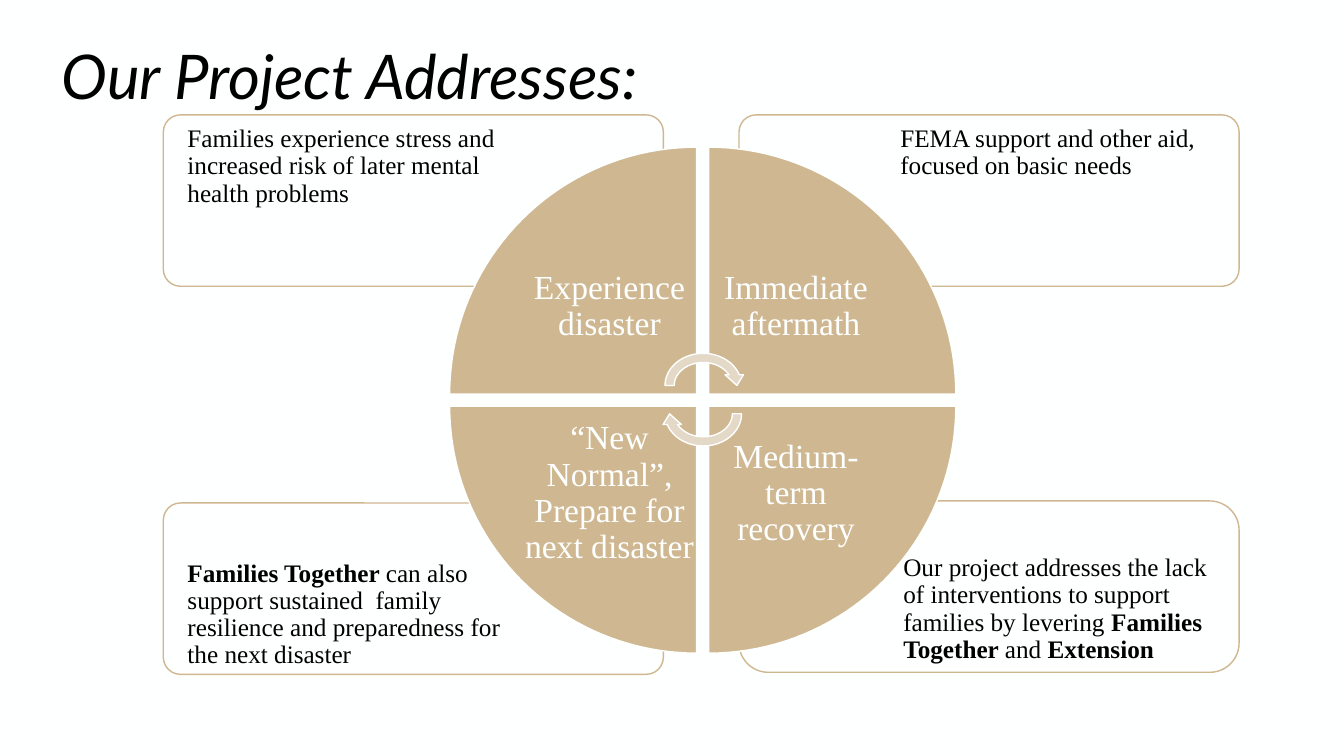
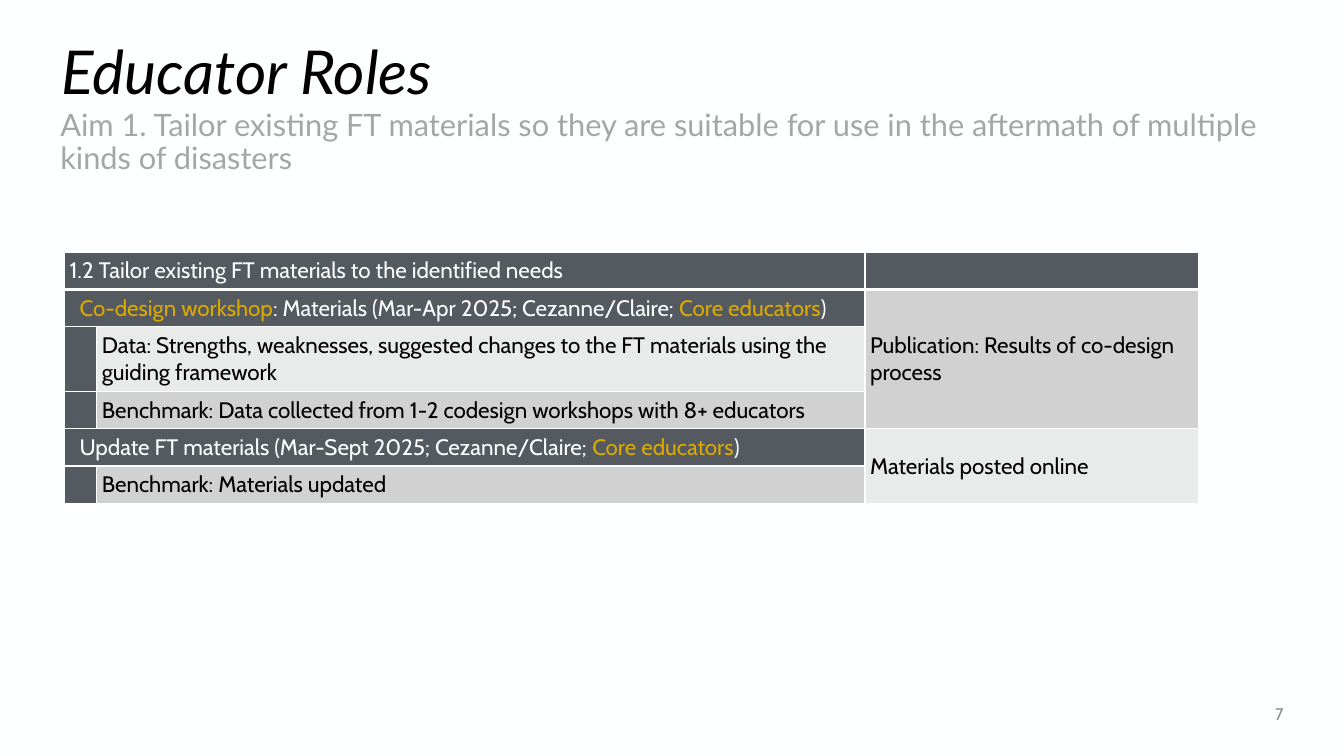
from math import cos, pi, sin

from lxml.etree import SubElement
from pptx import Presentation
from pptx.dml.color import RGBColor
from pptx.enum.shapes import MSO_SHAPE
from pptx.enum.text import MSO_ANCHOR, MSO_AUTO_SIZE, PP_ALIGN
from pptx.oxml.ns import qn
from pptx.util import Inches, Pt

PAPER = RGBColor(0xFE, 0xFF, 0xFF)
INK = RGBColor(0, 0, 0)
TAN = RGBColor(0xCF, 0xB8, 0x91)
PALE_TAN = RGBColor(0xE4, 0xD8, 0xC7)
SLATE = RGBColor(0x55, 0x59, 0x60)
GOLD = RGBColor(0xDA, 0xAA, 0x00)
MID_GRAY = RGBColor(0xD1, 0xD1, 0xD2)
LIGHT_GRAY = RGBColor(0xE9, 0xEA, 0xEA)
SUBTITLE_GRAY = RGBColor(0xA6, 0xA6, 0xA6)
NUMBER_GRAY = RGBColor(0x8C, 0x8C, 0x8C)
SERIF, SANS, TABLE_FONT = "Times New Roman", "Lato", "Cabin"
BOLD = {"bold": True}
GOLDEN = {"color": GOLD}

CENTER_X, CENTER_Y, HALF_GAP, RADIUS = 6.97, 3.97, 0.06, 2.45
PANEL_WIDTH, PANEL_HEIGHT = 4.96, 1.7
TOP, MIDDLE = MSO_ANCHOR.TOP, MSO_ANCHOR.MIDDLE

PANELS = [
    (1.62, 1.14, 0.17, (0.24, 0.11, 1.6, 0.57), TOP,
     ["Families experience stress and increased risk of later mental health problems"]),
    (7.33, 1.14, 0.17, (1.6, 0.11, 0.11, 0.57), TOP,
     ["FEMA support and other aid, focused on basic needs"]),
    (1.62, 4.99, 0.17, (0.24, 0.57, 1.6, 0.11), TOP,
     [("Families Together ", BOLD),
      "can also support sustained  family resilience and preparedness for the next disaster"]),
    (7.33, 4.97, 0.29, (1.63, 0.59, 0.14, 0.14), MIDDLE,
     ["Our project addresses the lack of interventions to support families by levering ",
      ("Families Together ", BOLD), "and", (" Extension", BOLD)]),
]
QUADRANTS = [
    (-1, -1, "Experience disaster"),
    (1, -1, "Immediate aftermath"),
    (1, 1, "Medium-term recovery"),
    (-1, 1, "“New Normal”, Prepare for next disaster"),
]
ARROWS = [(3.46, 0), (3.74, 180)]

COLUMNS = [0.32, 7.62, 3.31]
ROWS = [0.37, 0.37, 0.64, 0.37, 0.37, 0.37]
MERGES = [(0, 0, 0, 1), (1, 0, 1, 1), (4, 0, 4, 1), (1, 2, 3, 2), (4, 2, 5, 2)]
FILLS = [
    (SLATE, SLATE, SLATE),
    (SLATE, SLATE, MID_GRAY),
    (SLATE, LIGHT_GRAY, MID_GRAY),
    (SLATE, MID_GRAY, MID_GRAY),
    (SLATE, SLATE, LIGHT_GRAY),
    (SLATE, MID_GRAY, LIGHT_GRAY),
]
CELL_TEXT = {
    (0, 0): ["1.2 Tailor existing FT materials to the identified needs"],
    (1, 0): [("Co-design workshop", GOLDEN), ": Materials (Mar-Apr 2025; Cezanne/Claire; ",
             ("Core educators", GOLDEN), ")"],
    (1, 2): ["Publication: Results of co-design process"],
    (2, 1): ["Data: Strengths, weaknesses, suggested changes to the FT materials "
             "using the guiding framework"],
    (3, 1): ["Benchmark: Data collected from 1-2 codesign workshops with 8+ educators"],
    (4, 0): ["Update FT materials (Mar-Sept 2025; Cezanne/Claire; ",
             ("Core educators", GOLDEN), ")"],
    (4, 2): ["Materials posted online"],
    (5, 1): ["Benchmark: Materials updated"],
}
INDENTED_ROWS = (1, 4)


def write(frame, parts, font=SERIF, size=18, color=INK, bold=False, italic=False,
          align=PP_ALIGN.LEFT, anchor=TOP, spacing=None, insets=None):
    frame.word_wrap = True
    frame.auto_size = MSO_AUTO_SIZE.NONE
    frame.vertical_anchor = anchor
    if insets:
        (frame.margin_left, frame.margin_top,
         frame.margin_right, frame.margin_bottom) = map(Inches, insets)
    write_paragraph(frame.paragraphs[0], parts, font, size, color, bold, italic, align, spacing)


def write_paragraph(para, parts, font, size, color, bold=False, italic=False,
                    align=PP_ALIGN.LEFT, spacing=None):
    para.alignment = align
    para.line_spacing = spacing
    for part in parts:
        text, changes = (part, {}) if isinstance(part, str) else part
        span = para.add_run()
        span.text = text
        span.font.name = font
        span.font.size = Pt(size)
        span.font.bold = changes.get("bold", bold)
        span.font.italic = italic
        span.font.color.rgb = changes.get("color", color)


def paint(shape, fill, line):
    shape.shadow.inherit = False
    shape.fill.solid()
    shape.fill.fore_color.rgb = fill
    shape.line.color.rgb = line
    shape.line.width = Pt(1)


def add_titled_page(deck, title, place, size, spacing=None):
    page = deck.slides.add_slide(deck.slide_layouts[5])
    box = page.shapes.title
    box.left, box.top, box.width, box.height = map(Inches, place)
    write(box.text_frame, [title], font=SANS, size=size, italic=True,
          anchor=MIDDLE, spacing=spacing)
    return page


def add_text(page, place, parts, **style):
    box = page.shapes.add_textbox(*map(Inches, place))
    write(box.text_frame, parts, **style)


def add_panel(page, left, top, corner, insets, anchor, parts):
    panel = page.shapes.add_shape(
        MSO_SHAPE.ROUNDED_RECTANGLE,
        *map(Inches, (left, top, PANEL_WIDTH, PANEL_HEIGHT)))
    panel.adjustments[0] = corner / PANEL_HEIGHT
    paint(panel, PAPER, TAN)
    corner_inset = corner * (1 - cos(pi / 4))
    write(panel.text_frame, parts, anchor=anchor, spacing=0.9,
          insets=[inset - corner_inset for inset in insets])


def add_quadrant(page, side, level, text, steps=40):
    apex_x = CENTER_X + side * HALF_GAP
    apex_y = CENTER_Y + level * HALF_GAP
    angles = [step * pi / 2 / steps for step in range(steps + 1)]
    arc = [(Inches(apex_x + side * RADIUS * cos(angle)),
            Inches(apex_y + level * RADIUS * sin(angle))) for angle in angles]
    builder = page.shapes.build_freeform(Inches(apex_x), Inches(apex_y))
    builder.add_line_segments(arc, close=True)
    quadrant = builder.convert_to_shape()
    paint(quadrant, TAN, PAPER)
    sides = (0.72, 0) if side < 0 else (0, 0.72)
    ends = (0.82, 0.1) if level < 0 else (0.1, 0.82)
    write(quadrant.text_frame, [text], size=24, color=PAPER, align=PP_ALIGN.CENTER,
          anchor=MIDDLE, spacing=0.9, insets=(sides[0], ends[0], sides[1], ends[1]))


def add_borders(cell, widths):
    properties = cell._tc.get_or_add_tcPr()
    for edge, width in zip(("lnL", "lnR", "lnT", "lnB"), widths):
        line = SubElement(properties, qn(f"a:{edge}"), w=str(Pt(width)))
        fill = SubElement(line, qn("a:solidFill"))
        SubElement(fill, qn("a:srgbClr"), val=str(PAPER))


def add_roles_table(page):
    frame = page.shapes.add_table(
        len(ROWS), len(COLUMNS),
        *map(Inches, (0.64, 2.5, sum(COLUMNS), sum(ROWS))))
    table = frame.table
    table.horz_banding = False
    for column, width in zip(table.columns, COLUMNS):
        column.width = Inches(width)
    for row, height in zip(table.rows, ROWS):
        row.height = Inches(height)
    for top, left, bottom, right in MERGES:
        table.cell(top, left).merge(table.cell(bottom, right))
    for row, fills in enumerate(FILLS):
        for column, fill in enumerate(fills):
            cell = table.cell(row, column)
            cell.vertical_anchor = MIDDLE
            cell.margin_left = cell.margin_right = Inches(0.05)
            cell.margin_top = cell.margin_bottom = Inches(0.05)
            if row in INDENTED_ROWS and column == 0:
                cell.margin_left = Inches(0.15)
            add_borders(cell, (1, 1, 3 if row == 1 else 1, 3 if row == 0 else 1))
            cell.fill.solid()
            cell.fill.fore_color.rgb = fill
            para = cell.text_frame.paragraphs[0]
            parts = CELL_TEXT.get((row, column))
            if parts:
                write_paragraph(para, parts, TABLE_FONT, 16, PAPER if fill == SLATE else INK)
            else:
                SubElement(para._p, qn("a:endParaRPr"), sz="1600")


def build_project_page(deck):
    page = add_titled_page(deck, "Our Project Addresses:", (0.51, 0.32, 12.13, 0.84), 44)
    for panel in PANELS:
        add_panel(page, *panel)
    for quadrant in QUADRANTS:
        add_quadrant(page, *quadrant)
    for top, rotation in ARROWS:
        arrow = page.shapes.add_shape(
            MSO_SHAPE.CIRCULAR_ARROW, *map(Inches, (6.55, top, 0.85, 0.73)))
        arrow.rotation = rotation
        paint(arrow, PALE_TAN, PAPER)


def build_roles_page(deck):
    page = add_titled_page(deck, "Educator Roles", (0.51, 0.42, 12.32, 0.64), 43.2, 0.9)
    add_text(page, (0.5, 1.04, 12.33, 0.4),
             ["Aim 1. Tailor existing FT materials so they are suitable for use "
              "in the aftermath of multiple kinds of disasters"],
             font=SANS, size=22, color=SUBTITLE_GRAY, spacing=0.9)
    add_roles_table(page)
    add_text(page, (11.63, 6.88, 1.2, 0.4), ["7"], font=TABLE_FONT, size=12,
             color=NUMBER_GRAY, align=PP_ALIGN.RIGHT, anchor=MIDDLE)


def main():
    deck = Presentation()
    deck.slide_width, deck.slide_height = Inches(13.33), Inches(7.5)
    background = deck.slide_master.background.fill
    background.solid()
    background.fore_color.rgb = PAPER
    build_project_page(deck)
    build_roles_page(deck)
    deck.save("out.pptx")


if __name__ == "__main__":
    main()
